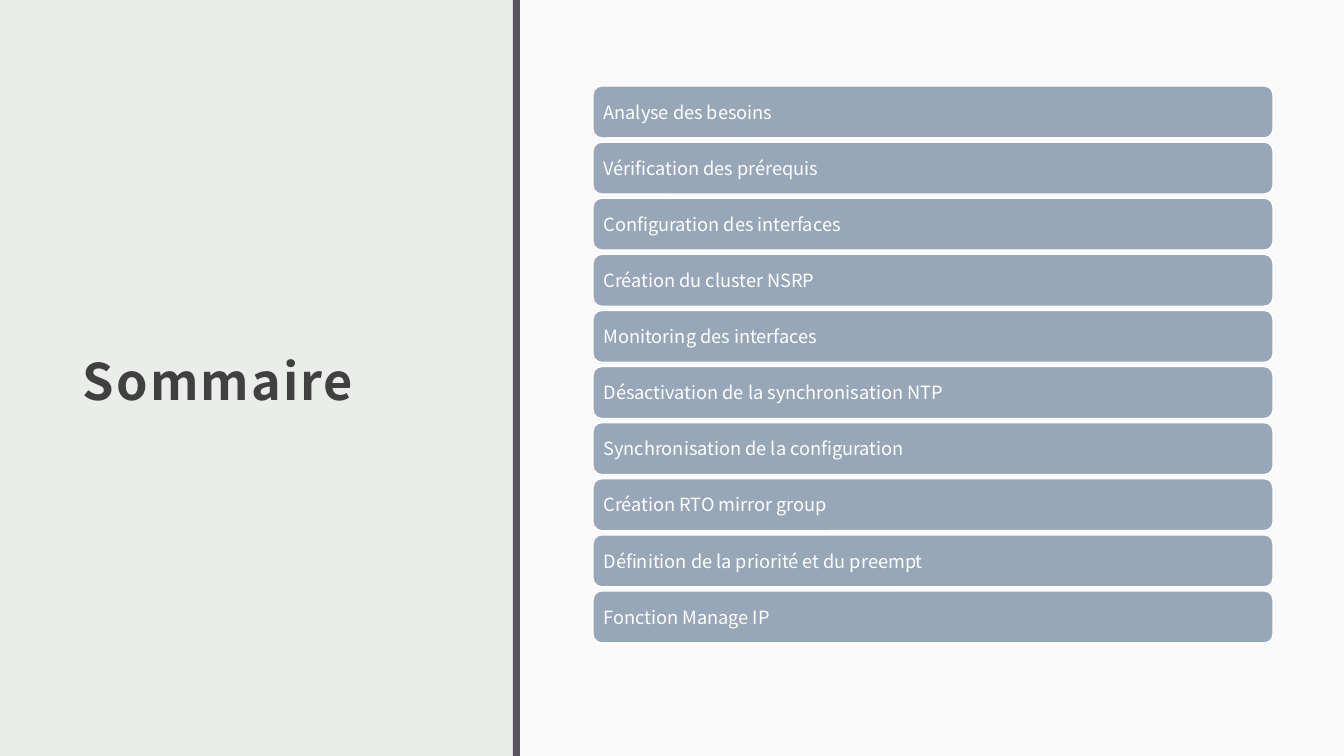
from lxml import etree
from pptx import Presentation
from pptx.dml.color import RGBColor
from pptx.enum.shapes import MSO_SHAPE as Preset
from pptx.enum.text import MSO_ANCHOR as Anchor, PP_ALIGN as Align
from pptx.oxml.ns import qn
from pptx.util import Emu, Pt

TITLE = "Sommaire"
TOPICS = [
    "Analyse des besoins",
    "Vérification des prérequis",
    "Configuration des interfaces",
    "Création du cluster NSRP",
    "Monitoring des interfaces",
    "Désactivation de la synchronisation NTP",
    "Synchronisation de la configuration",
    "Création RTO mirror group",
    "Définition de la priorité et du preempt",
    "Fonction Manage IP",
]

FONT = "Noto Sans CJK JP"
WHITE = RGBColor(0xFF, 0xFF, 0xFF)
BACKDROP = RGBColor(0xEB, 0xED, 0xEB)
DIVIDER = RGBColor(0x59, 0x54, 0x60)
BAR = RGBColor(0x97, 0xA7, 0xB8)
DARK = RGBColor(0x40, 0x40, 0x40)

PAGE_WIDTH, PAGE_HEIGHT = 1344, 756
PANEL_LEFT = 520
DIVIDER_LEFT, DIVIDER_WIDTH = 513, 7
TITLE_BOX = (71, 78, 376, 573)
BAR_LEFT, BAR_WIDTH, BAR_HEIGHT = 593, 680, 52
FIRST_TOP, LAST_TOP = 86, 591


def px(length):
    return Emu(round(length * 914400 / 100.8))


def add_block(page, preset, box, color):
    block = page.shapes.add_shape(preset, *map(px, box))
    block.shadow.inherit = False
    block.fill.solid()
    block.fill.fore_color.rgb = color
    block.line.fill.background()
    return block


def write(shape, text, size, color, insets):
    """Fill a shape with one left-aligned line; insets are left, top, right, bottom."""
    frame = shape.text_frame
    frame.text = text
    frame.word_wrap = True
    frame.vertical_anchor = Anchor.MIDDLE
    (frame.margin_left, frame.margin_top,
     frame.margin_right, frame.margin_bottom) = map(px, insets)
    para = frame.paragraphs[0]
    para.alignment = Align.LEFT
    span = para.runs[0]
    span.font.name = FONT
    span.font.size = Pt(size)
    span.font.color.rgb = color
    return para


def add_panel(page):
    box = (PANEL_LEFT, 0, PAGE_WIDTH - PANEL_LEFT, PAGE_HEIGHT)
    panel = add_block(page, Preset.RECTANGLE, box, WHITE)
    color = panel.fill._xPr.find(".//" + qn("a:srgbClr"))
    etree.SubElement(color, qn("a:alpha"), val="75000")
    add_block(page, Preset.RECTANGLE,
              (DIVIDER_LEFT, 0, DIVIDER_WIDTH, PAGE_HEIGHT), DIVIDER)


def add_title(page):
    box = page.shapes.add_textbox(*map(px, TITLE_BOX))
    para = write(box, TITLE, 36, DARK, (12, 12, 12, 10))
    para.line_spacing = 1.5
    font = para.runs[0].font
    font.bold = True
    font._element.set("spc", "150")


def add_topics(page):
    pitch = (LAST_TOP - FIRST_TOP) / (len(TOPICS) - 1)
    for index, topic in enumerate(TOPICS):
        box = (BAR_LEFT, FIRST_TOP + index * pitch, BAR_WIDTH, BAR_HEIGHT)
        bar = add_block(page, Preset.ROUNDED_RECTANGLE, box, BAR)
        bar.line.color.rgb = WHITE
        bar.line.width = Pt(1)
        write(bar, topic, 13, WHITE, (8, 5, 8, 5))


def main():
    deck = Presentation()
    deck.slide_width, deck.slide_height = px(PAGE_WIDTH), px(PAGE_HEIGHT)
    page = deck.slides.add_slide(deck.slide_layouts[6])
    page.background.fill.solid()
    page.background.fill.fore_color.rgb = BACKDROP
    add_panel(page)
    add_title(page)
    add_topics(page)
    deck.save("out.pptx")


if __name__ == "__main__":
    main()
